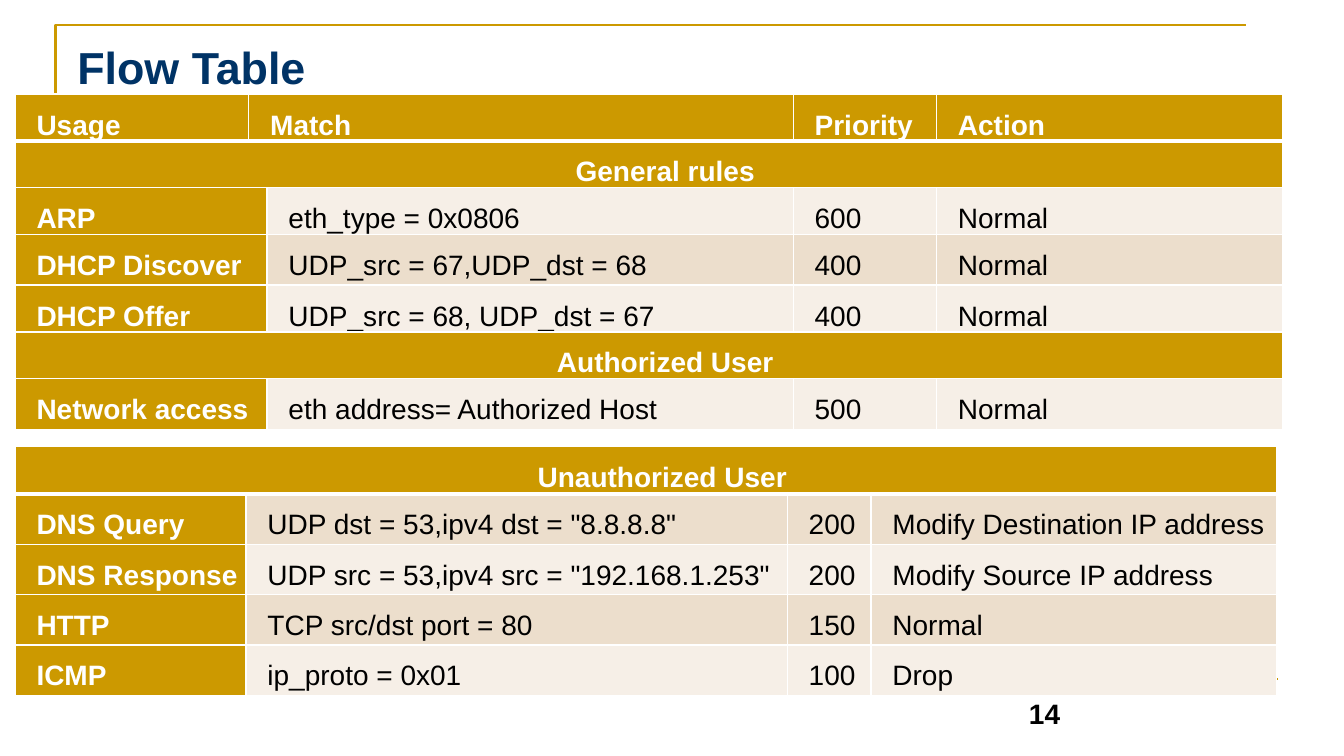
from dataclasses import dataclass

from lxml.etree import SubElement
from pptx import Presentation
from pptx.dml.color import RGBColor as RGB
from pptx.enum.shapes import MSO_CONNECTOR as Connector, MSO_SHAPE as Shape
from pptx.enum.text import MSO_ANCHOR as Anchor, MSO_AUTO_SIZE as AutoSize, PP_ALIGN as Align
from pptx.oxml.ns import qn
from pptx.util import Cm, Pt


@dataclass(frozen=True)
class Theme:
    font: str = "Arial"
    gold: RGB = RGB(0xCC, 0x99, 0x00)
    rule: RGB = RGB(0xC8, 0x96, 0x00)
    navy: RGB = RGB(0x00, 0x33, 0x66)
    white: RGB = RGB(0xFF, 0xFF, 0xFF)
    black: RGB = RGB(0x00, 0x00, 0x00)
    bands: tuple = (RGB(0xF6, 0xEF, 0xE7), RGB(0xEC, 0xDE, 0xCC))
    title_size: Pt = Pt(32)
    body_size: Pt = Pt(20)


theme = Theme()


def style_text(paragraph, size, color, bold, align=Align.LEFT):
    paragraph.alignment = align
    font = paragraph.font
    font.name, font.size, font.bold = theme.font, size, bold
    font.color.rgb = color


def add_border(cell, side, width):
    line = SubElement(cell._tc.get_or_add_tcPr(), qn(f"a:ln{side}"), w=str(Pt(width)))
    fill = SubElement(line, qn("a:solidFill"))
    SubElement(fill, qn("a:srgbClr"), val=str(theme.white))


deck = Presentation()
deck.slide_width, deck.slide_height = Cm(33.87), Cm(19.05)
slide = deck.slides.add_slide(deck.slide_layouts[5])

# Title
title = slide.shapes.title
title.left, title.top, title.width, title.height = Cm(1.7), Cm(0.76), Cm(30.48), Cm(3.18)
title_frame = title.text_frame
title_frame.text = "Flow Table"
title_frame.auto_size = AutoSize.NONE
title_frame.vertical_anchor = Anchor.TOP
title_frame.margin_left = title_frame.margin_top = Cm(0.25)
style_text(title_frame.paragraphs[0], theme.title_size, theme.navy, True)

# Corner rule around the title
corner_path = slide.shapes.build_freeform(Cm(1.4), Cm(2.34))
corner_path.add_line_segments([(Cm(1.4), Cm(0.63)), (Cm(31.4), Cm(0.63))], close=False)
corner = corner_path.convert_to_shape()
corner.shadow.inherit = False
corner.fill.background()
corner.line.color.rgb = theme.gold
corner.line.width = Pt(1.5)

# Page number
page_number = slide.shapes.add_shape(Shape.RECTANGLE, Cm(25.55), Cm(17.42), Cm(1.55), Cm(1.12))
page_number.shadow.inherit = False
page_number.fill.solid()
page_number.fill.fore_color.rgb = theme.white
page_number.line.fill.background()
page_number.text_frame.text = "14"
style_text(page_number.text_frame.paragraphs[0], theme.body_size, theme.black, True, Align.CENTER)

# Footer rule
footer_rule = slide.shapes.add_connector(Connector.STRAIGHT, Cm(1.73), Cm(17.12), Cm(32.21), Cm(17.12))
footer_rule.line.color.rgb = theme.rule
footer_rule.line.width = Pt(1.5)
SubElement(footer_rule._element.spPr, qn("a:effectLst"))

# Flow rules: None continues the cell to its left
low, high = 1.18, 1.27
known_flows = [
    (low, ["Usage", "Match", None, "Priority", "Action"]),
    (low, ["General rules", None, None, None, None]),
    (low, ["ARP", None, "eth_type = 0x0806", "600", "Normal"]),
    (high, ["DHCP Discover", None, "UDP_src = 67,UDP_dst = 68", "400", "Normal"]),
    (low, ["DHCP Offer", None, "UDP_src = 68, UDP_dst = 67", "400", "Normal"]),
    (low, ["Authorized User", None, None, None, None]),
    (high, ["Network access", None, "eth address= Authorized Host", "500", "Normal"]),
]
unauthorized_flows = [
    (low, ["Unauthorized User", None, None, None]),
    (high, ["DNS Query", 'UDP dst = 53,ipv4 dst = "8.8.8.8"', "200", "Modify Destination IP address"]),
    (high, ["DNS Response", 'UDP src = 53,ipv4 src = "192.168.1.253"', "200", "Modify Source IP address"]),
    (high, ["HTTP", "TCP src/dst port = 80", "150", "Normal"]),
    (high, ["ICMP", "ip_proto = 0x01", "100", "Drop"]),
]
flow_tables = [
    (2.37, [5.89, 0.3, 13.26, 3.61, 8.71], known_flows),
    (11.26, [5.82, 13.64, 2.11, 10.21], unauthorized_flows),
]

# Tables
for top, widths, flows in flow_tables:
    height = sum(row_height for row_height, _ in flows)
    table = slide.shapes.add_table(
        len(flows), len(widths), Cm(0.38), Cm(top), Cm(sum(widths)), Cm(height)).table
    table.first_row = table.horz_banding = False
    for column, width in zip(table.columns, widths):
        column.width = Cm(width)

    for r, (row_height, texts) in enumerate(flows):
        table.rows[r].height = Cm(row_height)
        is_section = not any(texts[1:])
        starts = [c for c, text in enumerate(texts) if text]
        for start, end in zip(starts, starts[1:] + [len(texts)]):
            if end - start > 1:
                table.cell(r, start).merge(table.cell(r, end - 1))

        for c, text in enumerate(texts):
            cell = table.cell(r, c)
            is_label = r == 0 or is_section or c == 0
            for side in "LRTB":
                under_header = (r, side) in ((0, "B"), (1, "T"))
                add_border(cell, side, 3 if under_header else 1)
            cell.fill.solid()
            cell.fill.fore_color.rgb = theme.gold if is_label else theme.bands[r % 2]
            cell.margin_left = cell.margin_right = Cm(0.18)
            cell.margin_top = cell.margin_bottom = Cm(0)
            if text:
                cell.text = text
                paragraph = cell.text_frame.paragraphs[0]
                paragraph.line_spacing = 1.5
                indent = Cm(0.84 if is_section else 0.36)
                paragraph._p.get_or_add_pPr().set("indent", str(indent))
                style_text(paragraph, theme.body_size, theme.white if is_label else theme.black,
                           is_label, Align.CENTER if is_section else Align.LEFT)

deck.save("out.pptx")
